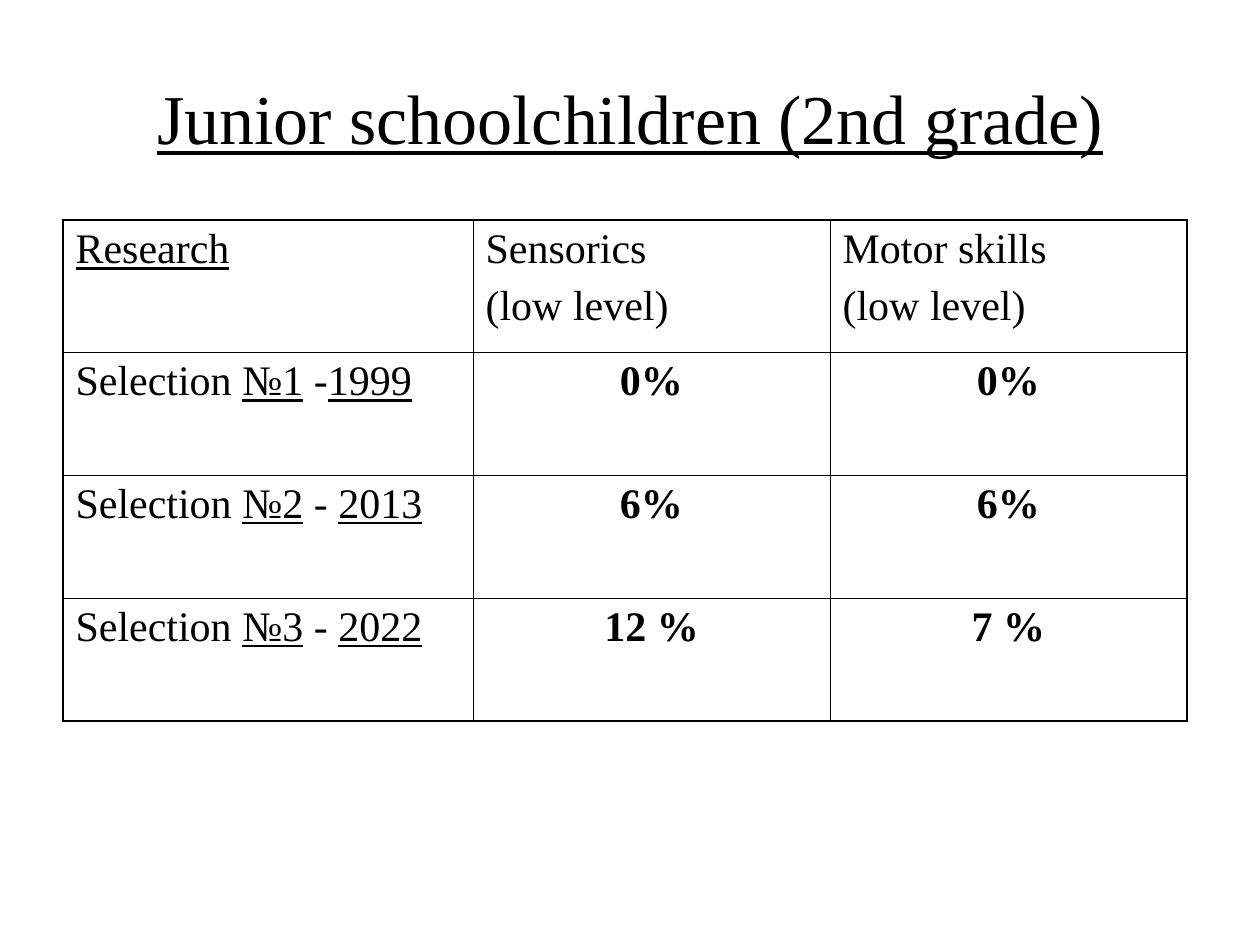
from typing import NamedTuple

from lxml.etree import SubElement
from pptx import Presentation
from pptx.dml.color import RGBColor
from pptx.enum.text import MSO_ANCHOR, PP_ALIGN
from pptx.oxml.ns import qn
from pptx.util import Emu, Pt

PIXELS_PER_INCH = 126
COLORS = {"text": "000000", "border": "000000", "page": "FFFFFF"}
FONT = "Times New Roman"
THIN, THICK = Pt(0.45), Pt(1.08)
COLUMN_WIDTHS = (410, 357, 357)
ROW_HEIGHTS = (132, 123, 123, 123)


class Span(NamedTuple):
    text: str
    underline: bool = False
    bold: bool = False


class CellText(NamedTuple):
    lines: tuple[tuple[Span, ...], ...]
    alignment: PP_ALIGN = PP_ALIGN.LEFT


class Selection(NamedTuple):
    number: str
    dash: str
    year: str
    sensorics: str
    motor_skills: str


SELECTIONS = (
    Selection("№1", " -", "1999", "0%", "0%"),
    Selection("№2", " - ", "2013", "6%", "6%"),
    Selection("№3", " - ", "2022", "12 %", "7 %"),
)


def px(length: int) -> Emu:
    return Emu(round(length * 914400 / PIXELS_PER_INCH))


def heading(name: str) -> CellText:
    return CellText(((Span(name),), (Span("(low level)"),)))


def share(value: str) -> CellText:
    return CellText(((Span(value, bold=True),),), PP_ALIGN.CENTER)


def selection_row(item: Selection) -> tuple[CellText, ...]:
    label = (Span("Selection "), Span(item.number, True), Span(item.dash), Span(item.year, True))
    return CellText((label,)), share(item.sensorics), share(item.motor_skills)


def add_span(para, span: Span, size: int) -> None:
    run = para.add_run()
    run.text = span.text
    font = run.font
    font.name, font.size = FONT, Pt(size)
    font.underline, font.bold = span.underline, span.bold
    font.color.rgb = RGBColor.from_string(COLORS["text"])


def set_borders(cell, widths: dict[str, int]) -> None:
    properties = cell._tc.get_or_add_tcPr()
    for index, (side, width) in enumerate(widths.items()):
        line = SubElement(properties, qn(f"a:ln{side}"), w=str(int(width)))
        fill = SubElement(line, qn("a:solidFill"))
        SubElement(fill, qn("a:srgbClr"), val=COLORS["border"])
        properties.insert(index, line)


def fill_cell(cell, content: CellText) -> None:
    cell.fill.background()
    cell.margin_left = cell.margin_right = Pt(7.2)
    cell.margin_top = cell.margin_bottom = Pt(3.6)
    frame = cell.text_frame
    for index, line in enumerate(content.lines):
        para = frame.add_paragraph() if index else frame.paragraphs[0]
        para.alignment = content.alignment
        para.space_before = Pt(6)
        for span in line:
            add_span(para, span, 24)


def add_title(page) -> None:
    title = page.shapes.title
    title.left, title.top, title.width, title.height = px(63), px(38), px(1134), px(158)
    title.text_frame.vertical_anchor = MSO_ANCHOR.MIDDLE
    para = title.text_frame.paragraphs[0]
    para.alignment = PP_ALIGN.CENTER
    add_span(para, Span("Junior schoolchildren (2nd grade)", True), 40)


def add_results(page) -> None:
    header = (CellText(((Span("Research", True),),)), heading("Sensorics"), heading("Motor skills"))
    rows = (header, *map(selection_row, SELECTIONS))
    table = page.shapes.add_table(
        len(rows), len(header), px(63), px(220), px(sum(COLUMN_WIDTHS)), px(sum(ROW_HEIGHTS))
    ).table
    table.first_row = table.horz_banding = False
    for column, width in zip(table.columns, COLUMN_WIDTHS):
        column.width = px(width)
    for row, height in zip(table.rows, ROW_HEIGHTS):
        row.height = px(height)
    last_row, last_column = len(rows) - 1, len(header) - 1
    for r, row in enumerate(rows):
        for c, content in enumerate(row):
            cell = table.cell(r, c)
            fill_cell(cell, content)
            outer = {"L": c == 0, "R": c == last_column, "T": r == 0, "B": r == last_row}
            set_borders(cell, {side: THICK if edge else THIN for side, edge in outer.items()})


def main() -> None:
    deck = Presentation()
    deck.slide_width, deck.slide_height = px(1260), px(945)
    page = deck.slides.add_slide(deck.slide_layouts[5])
    page.background.fill.solid()
    page.background.fill.fore_color.rgb = RGBColor.from_string(COLORS["page"])
    add_title(page)
    add_results(page)
    deck.save("out.pptx")


if __name__ == "__main__":
    main()
